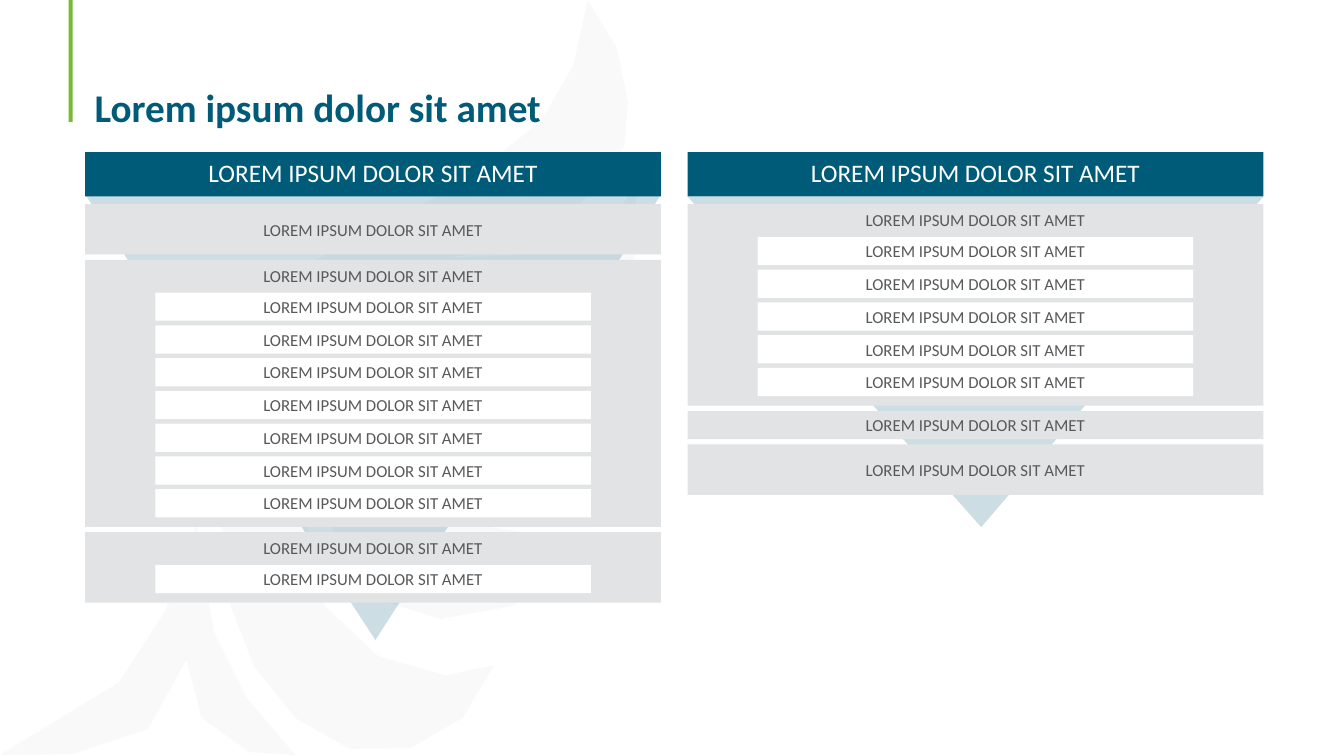
"""Build a slide of two stacked panels with pointers, on a grid of hundredths of an inch."""
import dataclasses
import typing

import lxml.etree
import pptx
import pptx.dml.color
import pptx.enum.shapes
import pptx.enum.text
import pptx.oxml.ns
import pptx.shapes.autoshape
import pptx.util

Shape = pptx.shapes.autoshape.Shape
Kind = pptx.enum.shapes.MSO_SHAPE
Align = pptx.enum.text.PP_ALIGN
Anchor = pptx.enum.text.MSO_ANCHOR
Points = list[tuple[int, int]]

CELL = 9144
COLS, ROWS = 1333, 750
LABEL = "LOREM IPSUM DOLOR SIT AMET"


@dataclasses.dataclass(frozen=True)
class Theme:
    font: str = "Calibri"
    teal: str = "005B79"
    green: str = "78BB32"
    mist: str = "E1E2E4"
    gray: str = "E2E3E4"
    white: str = "FFFFFF"
    ink: str = "58595B"
    title: int = 28
    head: int = 18
    body: int = 12
    faint: int = 20


@dataclasses.dataclass(frozen=True)
class Box:
    left: float
    top: float
    width: float
    height: float

    def span(self) -> list[int]:
        return [round(side * CELL) for side in dataclasses.astuple(self)]


@dataclasses.dataclass(frozen=True)
class Style:
    size: int
    color: str
    align: typing.Any = Align.CENTER
    anchor: typing.Any = Anchor.MIDDLE
    upper: float = 0
    lower: float = 0
    bold: bool = False
    pitch: float = 1.0


@dataclasses.dataclass(frozen=True)
class Block:
    items: int = 0
    plain: float = 50

    @property
    def height(self) -> float:
        return 37.5 + self.items * PITCH if self.items else self.plain


@dataclasses.dataclass(frozen=True)
class Panel:
    left: float
    tip: float
    start: float
    depth: float
    blocks: list[Block]


THEME = Theme()
TITLE = Style(THEME.title, THEME.teal, Align.LEFT, Anchor.BOTTOM, 5, 5, True, 0.9)
HEAD = Style(THEME.head, THEME.white, anchor=Anchor.TOP, upper=5, lower=5)
GROUP = Style(THEME.body, THEME.ink, anchor=Anchor.TOP, upper=6)
ITEM = Style(THEME.body, THEME.ink)

WIDE, SLIM, THIN = 571, 432, 28
PITCH, GAP = 32.5, 5.25
CROWN, BAND, FIRST = 151, 44, 202.5

PANELS = [
    Panel(84.5, 0.496, 193, 442, [Block(), Block(7), Block(1)]),
    Panel(682, 0.49, 195, 328, [Block(5), Block(plain=THIN), Block()]),
]

PLUME: Points = [
    (490, 660), (459, 712), (407, 742), (347, 743), (294, 713), (252, 661),
    (228, 599), (216, 489), (235, 379), (309, 260), (461, 180), (537, 120),
    (569, 64), (583, 0), (612, 48), (623, 102), (619, 145), (548, 239),
    (441, 256), (582, 250), (631, 185), (630, 259), (560, 338), (395, 302),
    (617, 347), (580, 457), (346, 362), (420, 513), (580, 537), (509, 601),
    (437, 614), (367, 592), (290, 453), (322, 601), (375, 651), (442, 670),
]
TAIL: Points = [
    (293, 749), (245, 693), (212, 627), (195, 519), (164, 606), (118, 677),
    (0, 749), (72, 748), (147, 723), (185, 654), (200, 712), (247, 746),
]


def tint(shape: Shape, color: str, share: int = 100) -> None:
    shape.shadow.inherit = False
    shape.fill.solid()
    shape.fill.fore_color.rgb = pptx.dml.color.RGBColor.from_string(color)
    shape.line.fill.background()
    if share < 100:
        tag = pptx.oxml.ns.qn
        hue = shape.element.spPr.find(tag("a:solidFill")).find(tag("a:srgbClr"))
        lxml.etree.SubElement(hue, tag("a:alpha")).set("val", str(share * 1000))


def write(shape: Shape, text: str, style: Style) -> None:
    frame = shape.text_frame
    frame.word_wrap = True
    frame.vertical_anchor = style.anchor
    frame.margin_left = frame.margin_right = 10 * CELL
    frame.margin_top = round(style.upper * CELL)
    frame.margin_bottom = round(style.lower * CELL)
    para = frame.paragraphs[0]
    para.alignment = style.align
    para.line_spacing = style.pitch
    run = para.add_run()
    run.text = text
    run.font.name = THEME.font
    run.font.size = pptx.util.Pt(style.size)
    run.font.bold = style.bold
    run.font.color.rgb = pptx.dml.color.RGBColor.from_string(style.color)


def bar(slide: typing.Any, box: Box, fill: str, style: Style | None = None) -> None:
    shape = slide.shapes.add_shape(Kind.RECTANGLE, *box.span())
    tint(shape, fill)
    if style:
        write(shape, LABEL, style)


def leaf(slide: typing.Any) -> None:
    pen = slide.shapes.build_freeform(*PLUME[0], scale=CELL)
    pen.add_line_segments(PLUME[1:])
    pen.move_to(*TAIL[0])
    pen.add_line_segments(TAIL[1:])
    tint(pen.convert_to_shape(), THEME.mist, THEME.faint)


def stack(slide: typing.Any, panel: Panel) -> None:
    box = Box(panel.left, panel.start, WIDE, panel.depth)
    wedge = slide.shapes.add_shape(Kind.ISOSCELES_TRIANGLE, *box.span())
    wedge.rotation = 180
    wedge.adjustments[0] = panel.tip
    tint(wedge, THEME.teal, THEME.faint)
    bar(slide, Box(panel.left, CROWN, WIDE, BAND), THEME.teal, HEAD)
    top = FIRST
    inner = panel.left + (WIDE - SLIM) / 2
    for block in panel.blocks:
        style = GROUP if block.items else ITEM
        bar(slide, Box(panel.left, top, WIDE, block.height), THEME.gray, style)
        for row in range(1, block.items + 1):
            bar(slide, Box(inner, top + row * PITCH, SLIM, THIN), THEME.white, ITEM)
        top += block.height + GAP


def main() -> None:
    deck = pptx.Presentation()
    deck.slide_width, deck.slide_height = COLS * CELL, ROWS * CELL
    slide = deck.slides.add_slide(deck.slide_layouts[6])
    bar(slide, Box(68, 0, 4, 121), THEME.green)
    leaf(slide)
    title = slide.shapes.add_textbox(*Box(84, 41, 1198, 94).span())
    write(title, "Lorem ipsum dolor sit amet", TITLE)
    for panel in PANELS:
        stack(slide, panel)
    deck.save("out.pptx")


if __name__ == "__main__":
    main()
